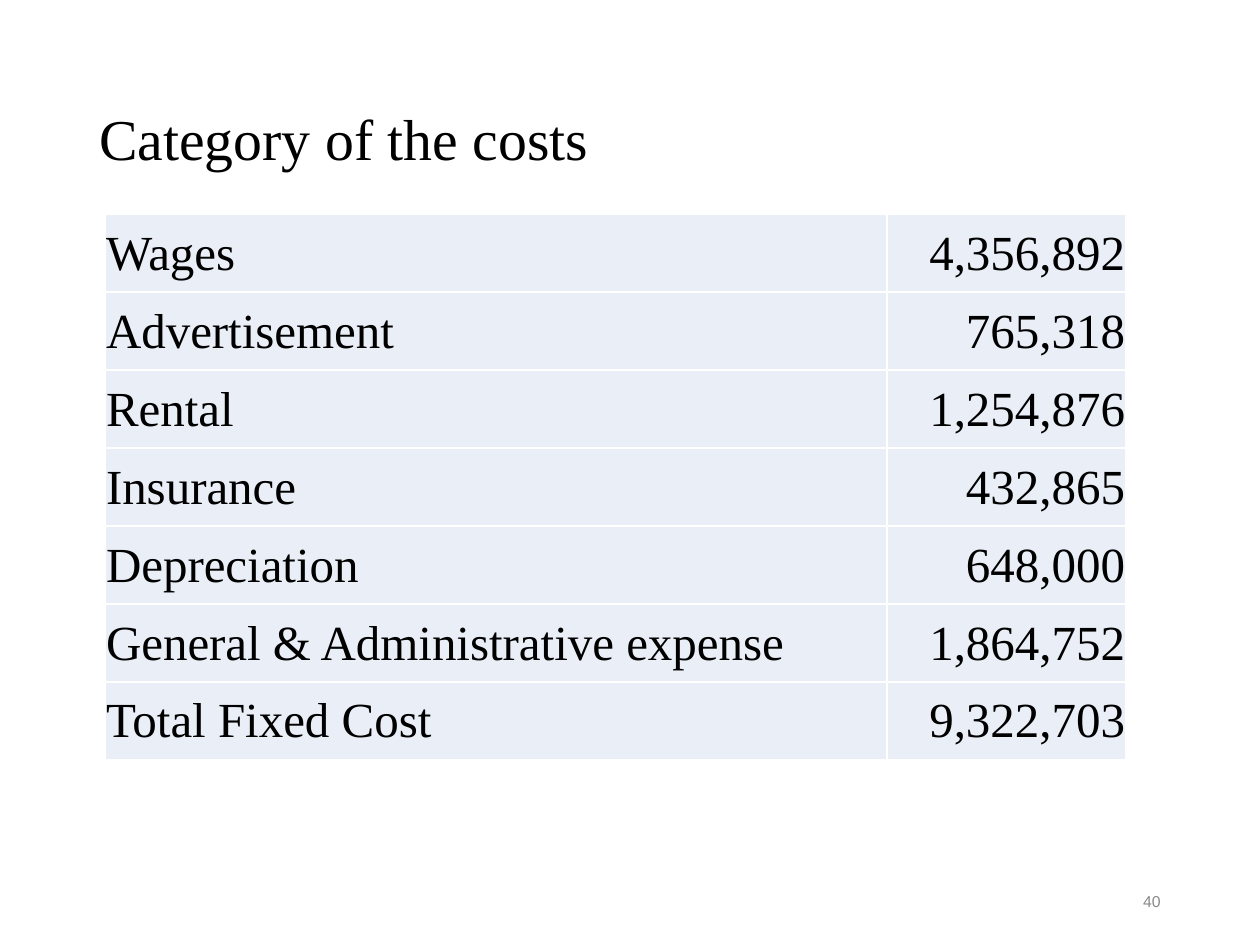
from lxml import etree
from pptx import Presentation
from pptx import util as u
from pptx.dml.color import RGBColor
from pptx.enum import text
from pptx.oxml import ns

PX = u.Inches(1) / 126
BLACK = RGBColor(0x00, 0x00, 0x00)
GREY = RGBColor(0x89, 0x89, 0x89)
PALE_BLUE = RGBColor(0xEA, 0xEF, 0xF7)
WHITE = RGBColor(0xFF, 0xFF, 0xFF)
SERIF = "Times New Roman"
SANS = "Arial"
LEFT = text.PP_ALIGN.LEFT
RIGHT = text.PP_ALIGN.RIGHT
MIDDLE = text.MSO_ANCHOR.MIDDLE

COSTS = [
    ("Wages", "4,356,892"),
    ("Advertisement", "765,318"),
    ("Rental", "1,254,876"),
    ("Insurance", "432,865"),
    ("Depreciation", "648,000"),
    ("General & Administrative expense", "1,864,752"),
    ("Total Fixed Cost", "9,322,703"),
]


def px(length):
    """Turn pixels into EMU."""
    return u.Emu(round(length * PX))


def style_paragraph(para, font_name, size, color, align):
    """Align a paragraph and format its runs."""
    para.alignment = align
    for span in para.runs:
        span.font.name = font_name
        span.font.size = u.Pt(size)
        span.font.color.rgb = color


def add_label(page, box, words, font_name, size, color, align, spacing=1.0):
    """Place one vertically centred line of text in a box."""
    frame = page.shapes.add_textbox(*map(px, box)).text_frame
    frame.word_wrap = True
    frame.vertical_anchor = MIDDLE
    frame.text = words
    para = frame.paragraphs[0]
    para.line_spacing = spacing
    style_paragraph(para, font_name, size, color, align)


def add_borders(cell, color, width):
    """Draw a solid line on all four sides of a cell."""
    properties = cell._tc.get_or_add_tcPr()
    for side in ("a:lnL", "a:lnR", "a:lnT", "a:lnB"):
        line = etree.SubElement(properties, ns.qn(side), w=str(u.Pt(width)))
        fill = etree.SubElement(line, ns.qn("a:solidFill"))
        etree.SubElement(fill, ns.qn("a:srgbClr"), val=str(color))


def fill_cell(cell, words, align):
    """Write and format one table cell."""
    cell.margin_left = cell.margin_right = cell.margin_top = px(1)
    cell.margin_bottom = 0
    cell.vertical_anchor = MIDDLE
    add_borders(cell, WHITE, 1)
    cell.fill.solid()
    cell.fill.fore_color.rgb = PALE_BLUE
    cell.text = words
    style_paragraph(cell.text_frame.paragraphs[0], SERIF, 28, BLACK, align)


def add_cost_table(page, box, rows, amount_width):
    """Fill a box with equal rows of cost names and amounts."""
    left, top, width, height = box
    table = page.shapes.add_table(len(rows), 2, *map(px, box)).table
    table.first_row = table.horz_banding = False
    table.columns[0].width = px(width - amount_width)
    table.columns[1].width = px(amount_width)
    for index, row in enumerate(rows):
        table.rows[index].height = px(height / len(rows))
        for column, (words, align) in enumerate(zip(row, (LEFT, RIGHT))):
            fill_cell(table.cell(index, column), words, align)


def main():
    """Build the cost slide and save it."""
    deck = Presentation()
    deck.slide_width, deck.slide_height = px(1260), px(945)
    page = deck.slides.add_slide(deck.slide_layouts[6])
    add_label(page, (87, 50, 1086, 183), "Category of the costs",
              SERIF, 33, BLACK, LEFT, 0.9)
    add_cost_table(page, (105, 214, 1021, 546), COSTS, 239)
    add_label(page, (890, 876, 283, 50), "40", SANS, 9, GREY, RIGHT)
    deck.save("out.pptx")


if __name__ == "__main__":
    main()
